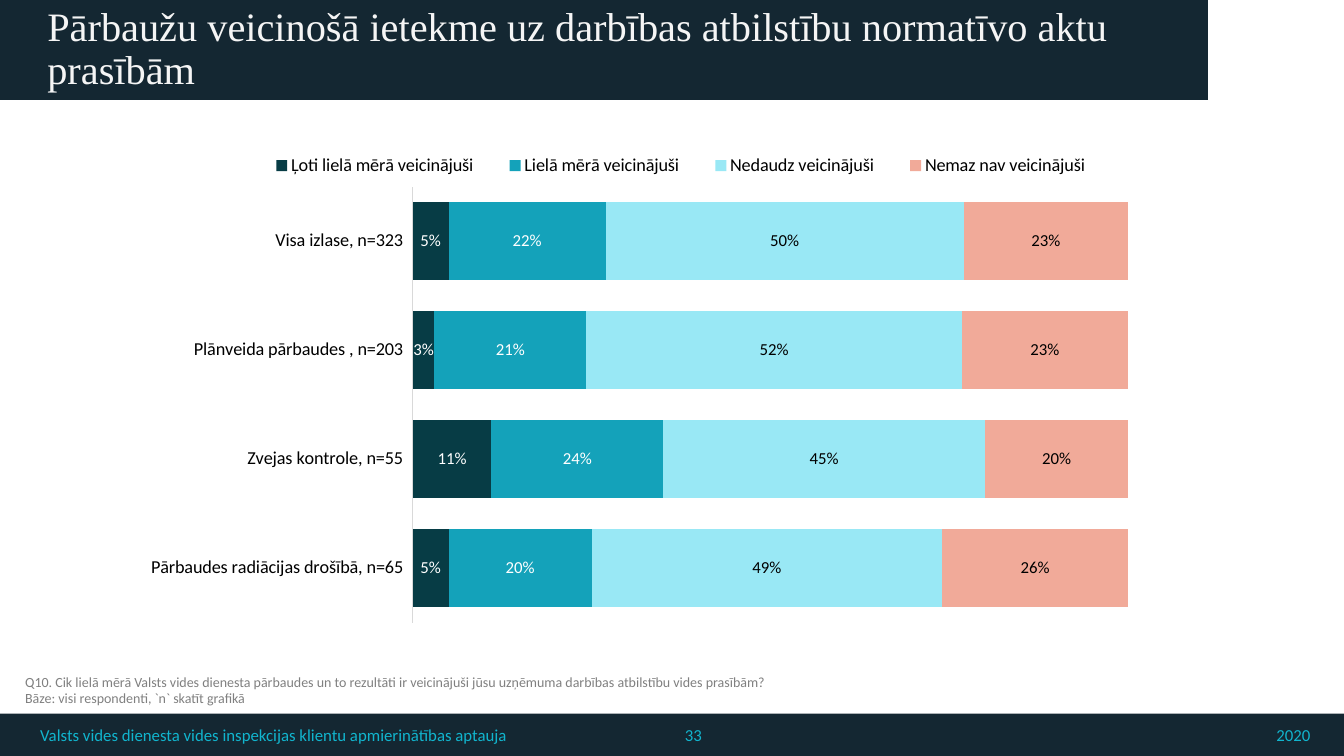
from lxml import etree
from pptx import Presentation
from pptx.chart.data import CategoryChartData
from pptx.dml.color import RGBColor
from pptx.enum.chart import XL_CHART_TYPE, XL_LEGEND_POSITION, XL_TICK_LABEL_POSITION, XL_TICK_MARK
from pptx.enum.shapes import MSO_SHAPE
from pptx.enum.text import MSO_ANCHOR, MSO_AUTO_SIZE, PP_ALIGN
from pptx.oxml.ns import qn
from pptx.util import Inches, Pt

LEFT, CENTER, RIGHT = PP_ALIGN.LEFT, PP_ALIGN.CENTER, PP_ALIGN.RIGHT
MIDDLE, BOTTOM = MSO_ANCHOR.MIDDLE, MSO_ANCHOR.BOTTOM
STACKED = XL_CHART_TYPE.BAR_STACKED_100
NO_TICK = XL_TICK_MARK.NONE

TITLE = "Pārbaužu veicinošā ietekme uz darbības atbilstību normatīvo aktu prasībām"
NOTES = [
    "Q10. Cik lielā mērā Valsts vides dienesta pārbaudes un to rezultāti ir veicinājuši "
    "jūsu uzņēmuma darbības atbilstību vides prasībām?",
    "Bāze: visi respondenti, `n` skatīt grafikā",
]
GROUPS = ["Visa izlase, n=323", "Plānveida pārbaudes , n=203",
          "Zvejas kontrole, n=55", "Pārbaudes radiācijas drošībā, n=65"]
ANSWERS = [
    ("Ļoti lielā mērā veicinājuši", (5, 3, 11, 5), "073C45", "FFFFFF"),
    ("Lielā mērā veicinājuši", (22, 21, 24, 20), "14A2BA", "FFFFFF"),
    ("Nedaudz veicinājuši", (50, 52, 45, 49), "99E8F5", "000000"),
    ("Nemaz nav veicinājuši", (23, 23, 20, 26), "F1AA99", "000000"),
]
NAVY, CYAN = "061A26", "11B5CE"
BAND_OPACITY = 94

SLIDE_W, SLIDE_H = Inches(13.33), Inches(7.5)
FOOT_TOP, FOOT_H, HEAD_H = 94.4, 5.6, 13.2
FOOTER = [
    ("Valsts vides dienesta vides inspekcijas klientu apmierinātības aptauja", 2.25, 47.5, LEFT),
    ("33", 41.55, 20.1, CENTER),
    ("2020", 78.15, 20.1, RIGHT),
]
BANDS = [(0, FOOT_TOP, 100, FOOT_H), (0, 0, 89.87, HEAD_H)]
TITLE_BOX = (2.77, 0, 87.1, HEAD_H)
CHART_BOX = (-1.8, 18.13, 87.4, 68.93)
NOTES_BOX = (1.13, 87.07, 97.8, 7.07)
PLOT_LAYOUT = (0.372, 0.095, 0.609, 0.837)
LEGEND_LAYOUT = (0.23, 0.02, 0.74, 0.07)


def place(box):
    """Turn percent shares of the slide into left, top, width and height."""
    x, y, w, h = box
    return [round(share * side / 100)
            for share, side in ((x, SLIDE_W), (y, SLIDE_H), (w, SLIDE_W), (h, SLIDE_H))]


def rgb(code):
    """Return the colour for a hex string."""
    return RGBColor.from_string(code)


def style(font, size, color, face="Calibri"):
    """Set size, colour and typeface of a font."""
    font.size, font.name = Pt(size), face
    font.color.rgb = rgb(color)


def write(frame, lines, size=12, color=CYAN, face="Calibri", align=LEFT, anchor=MIDDLE, spacing=1.0):
    """Fill a text frame with formatted paragraphs."""
    frame.word_wrap = True
    frame.auto_size = MSO_AUTO_SIZE.NONE
    frame.vertical_anchor = anchor
    for index, line in enumerate(lines):
        paragraph = frame.paragraphs[0] if index == 0 else frame.add_paragraph()
        paragraph.alignment, paragraph.line_spacing = align, spacing
        run = paragraph.add_run()
        run.text = line
        style(run.font, size, color, face)


def add_band(slide, box):
    """Draw a slightly transparent dark band."""
    band = slide.shapes.add_shape(MSO_SHAPE.RECTANGLE, *place(box))
    band.shadow.inherit = False
    band.fill.solid()
    band.fill.fore_color.rgb = rgb(NAVY)
    band.line.fill.background()
    color = band.fill._xPr.find(".//" + qn("a:srgbClr"))
    etree.SubElement(color, qn("a:alpha"), val=str(BAND_OPACITY * 1000))


def set_layout(parent, shares, before, inner=False):
    """Fix the position of a chart part as shares of the chart."""
    for old in parent.findall(qn("c:layout")):
        parent.remove(old)
    layout = etree.Element(qn("c:layout"))
    manual = etree.SubElement(layout, qn("c:manualLayout"))
    if inner:
        etree.SubElement(manual, qn("c:layoutTarget"), val="inner")
    for tag in ("xMode", "yMode"):
        etree.SubElement(manual, qn("c:" + tag), val="edge")
    for tag, share in zip("xywh", shares):
        etree.SubElement(manual, qn("c:" + tag), val=str(share))
    parent.find(qn(before)).addprevious(layout)


def add_answers_chart(slide):
    """Add the stacked bars of answers by group."""
    data = CategoryChartData(number_format="0")
    data.categories = GROUPS
    for name, values, _, _ in ANSWERS:
        data.add_series(name, values)
    chart = slide.shapes.add_chart(STACKED, *place(CHART_BOX), data).chart
    chart.has_title = False
    style(chart.font, 10, "000000")

    plot = chart.plots[0]
    plot.gap_width, plot.overlap, plot.vary_by_categories = 41, 100, False
    for series, (_, _, fill, ink) in zip(plot.series, ANSWERS):
        series.format.fill.solid()
        series.format.fill.fore_color.rgb = rgb(fill)
        labels = series.data_labels
        labels.show_value = True
        labels.number_format, labels.number_format_is_linked = "0\\%", False
        style(labels.font, 12, ink)

    groups = chart.category_axis
    groups.reverse_order = True
    groups.major_tick_mark = groups.minor_tick_mark = NO_TICK
    groups.tick_label_position = XL_TICK_LABEL_POSITION.LOW
    groups.format.line.color.rgb = rgb("D9D9D9")
    groups.format.line.width = Pt(0.75)
    style(groups.tick_labels.font, 13, "000000")
    chart.value_axis.has_major_gridlines = False
    chart.value_axis.visible = False

    chart.has_legend = True
    legend = chart.legend
    legend.position = XL_LEGEND_POSITION.TOP
    legend.include_in_layout = False
    style(legend.font, 13, "000000")
    set_layout(legend._element, LEGEND_LAYOUT, "c:overlay")
    set_layout(chart._chartSpace.chart.plotArea, PLOT_LAYOUT, "c:barChart", inner=True)


def main():
    """Build the slide and save it."""
    deck = Presentation()
    deck.slide_width, deck.slide_height = SLIDE_W, SLIDE_H
    slide = deck.slides.add_slide(deck.slide_layouts[5])
    for box in BANDS:
        add_band(slide, box)
    for text, left, width, align in FOOTER:
        box = slide.shapes.add_textbox(*place((left, FOOT_TOP, width, FOOT_H)))
        write(box.text_frame, [text], align=align)

    title = slide.shapes.title
    title.left, title.top, title.width, title.height = place(TITLE_BOX)
    write(title.text_frame, [TITLE], size=28.8, color="F5F5F5", face="Times New Roman", spacing=0.9)
    slide.shapes._spTree.append(title._element)

    add_answers_chart(slide)
    notes = slide.shapes.add_textbox(*place(NOTES_BOX))
    write(notes.text_frame, NOTES, size=10, color="808080", anchor=BOTTOM)
    deck.save("out.pptx")


if __name__ == "__main__":
    main()
